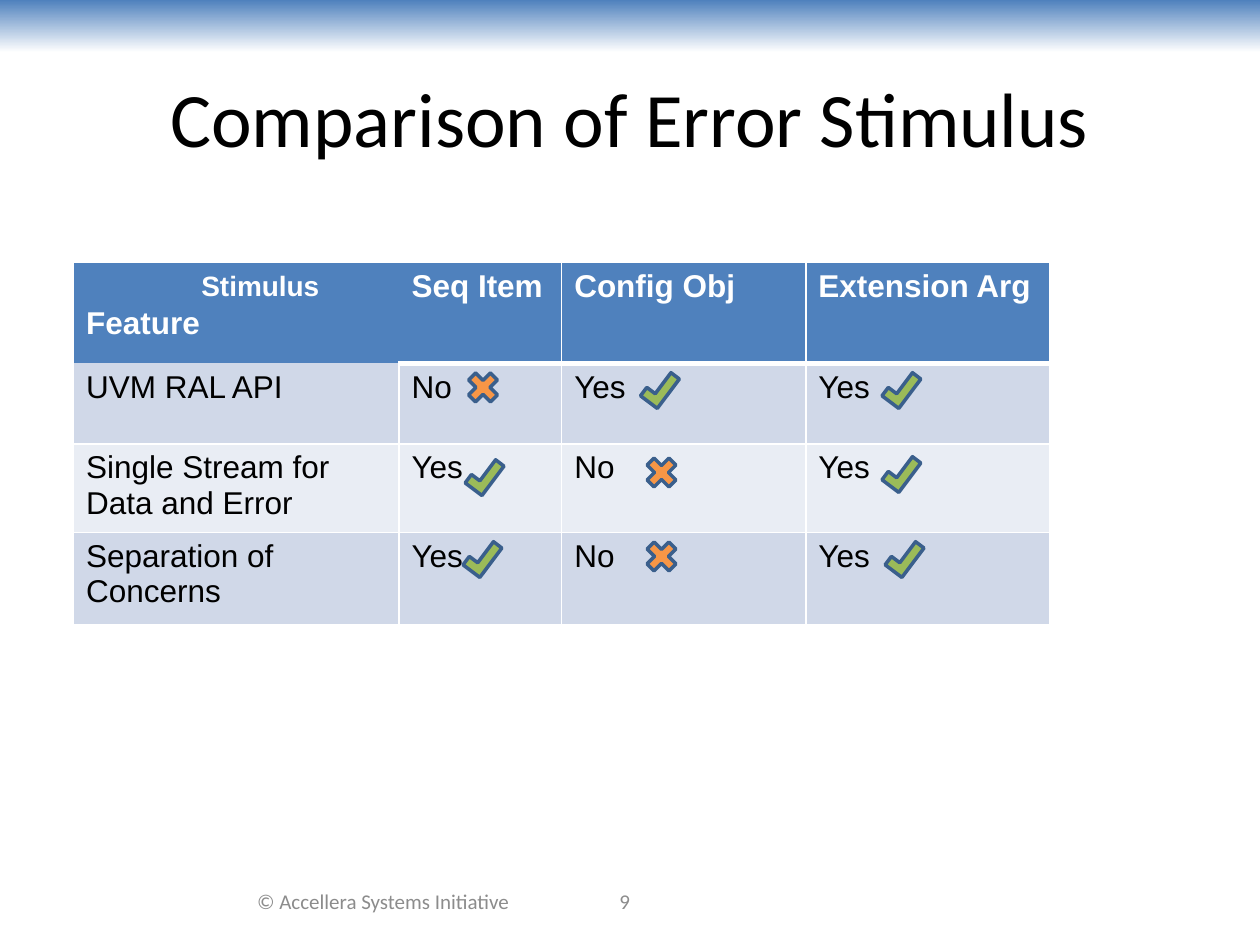
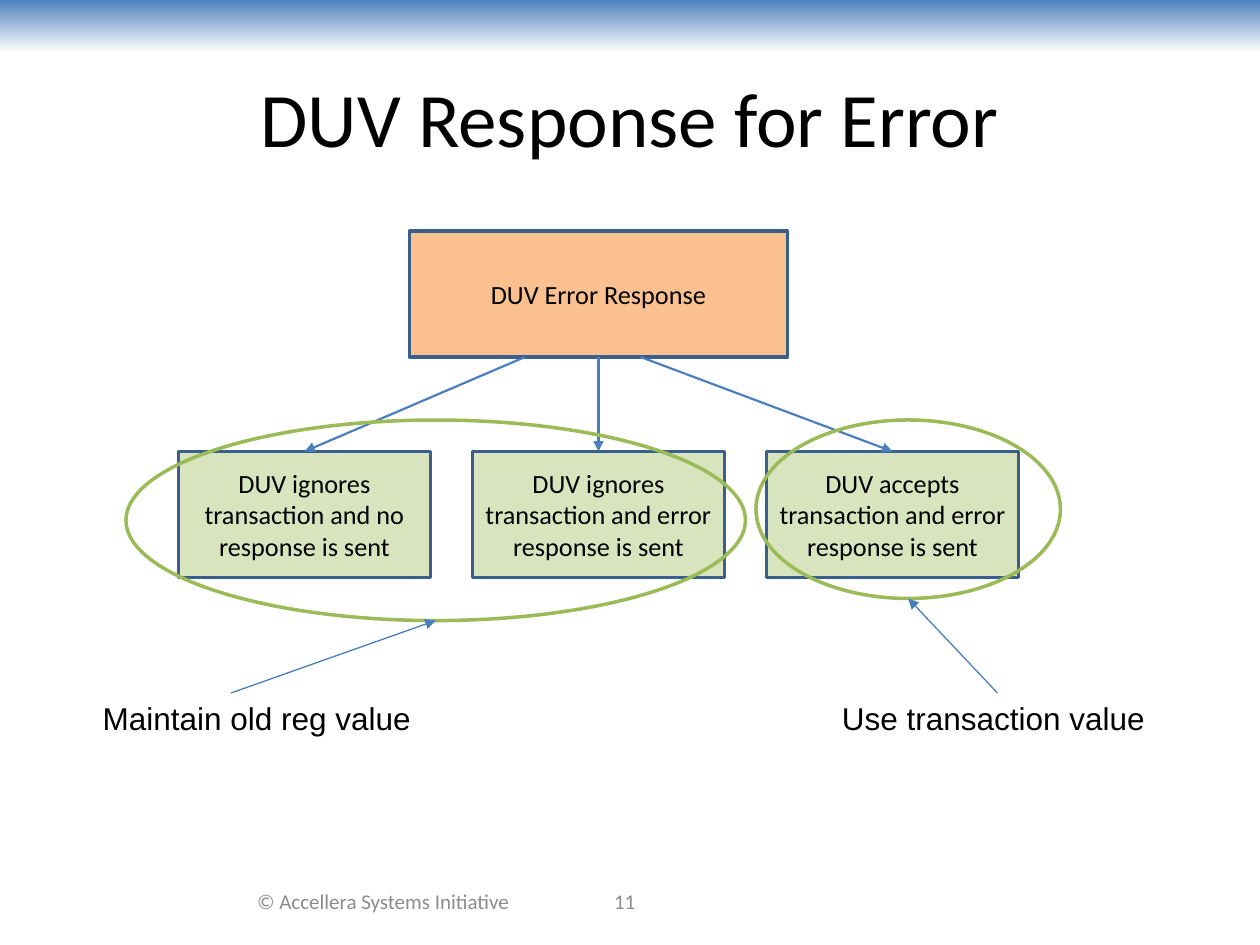
"""Builds two slides on error stimulus and DUV response, laid out on a 120 by 90 grid."""
from typing import NamedTuple, Optional

from lxml.etree import SubElement
from pptx import Presentation
from pptx.dml.color import RGBColor
from pptx.enum.shapes import MSO_CONNECTOR, MSO_SHAPE as Shape
from pptx.enum.text import MSO_ANCHOR as Anchor, PP_ALIGN as Align
from pptx.oxml.ns import qn
from pptx.util import Inches, Pt

SLIDE_W, SLIDE_H = Inches(10), Inches(7.5)
COLS, ROWS = 120, 90
BLUE, WHITE, BLACK, GREY = "4F81BD", "FFFFFF", "000000", "8C8C8C"
OUTLINE, ARROW = "3A5F8C", "4B7EBC"
ORANGE, GREEN, PEACH, PALE_GREEN = "F79646", "9BBB59", "FAC090", "D7E4BD"
BANDS = ("D0D8E8", "E9EDF4")


class Box(NamedTuple):
    x: float
    y: float
    w: float
    h: float


class Arrow(NamedTuple):
    x1: float
    y1: float
    x2: float
    y2: float
    width: float = 1.25


class Mark(NamedTuple):
    x: float
    y: float
    good: bool


class Style(NamedTuple):
    size: float
    font: str = "Calibri"
    colour: str = BLACK
    bold: bool = False
    align: Align = Align.CENTER


FOOTER = Style(12, colour=GREY)
NODE = Style(15)
LABEL = Style(18, "Arial", align=Align.LEFT)
HEADER = Style(18, "Arial", WHITE, True, Align.LEFT)

TABLE_AT = Box(7, 25, 93, 34)
COL_WIDTHS = (31, 15.5, 23.25, 23.25)
ROW_HEIGHTS = (9.6, 7.7, 7.9, 8.8)
FEATURES = (
    ("Feature", "Seq Item", "Config Obj", "Extension Arg"),
    ("UVM RAL API", "No", "Yes", "Yes"),
    ("Single Stream for Data and Error", "Yes", "No", "Yes"),
    ("Separation of Concerns", "Yes", "No", "Yes"),
)
MARKS = (
    Mark(44, 34.9, False), Mark(61.1, 35.9, True), Mark(84.1, 35.9, True),
    Mark(44.4, 44.2, True), Mark(61, 43, False), Mark(84.1, 43.9, True),
    Mark(44.2, 52, True), Mark(61, 51, False), Mark(84.4, 52, True),
)
RESPONSES = (
    "DUV ignores transaction and no response is sent",
    "DUV ignores transaction and error response is sent",
    "DUV accepts transaction and error response is sent",
)
BRANCHES = (Arrow(50, 34, 29, 43), Arrow(61, 34, 85, 43), Arrow(57, 34, 57, 43))
GROUPS = (Box(12, 40, 59, 19.1), Box(72, 40, 29, 17))
POINTERS = (Arrow(22, 66, 41.5, 59.1, 0.75), Arrow(95, 66, 86.5, 57, 0.75))
OUTCOMES = ((8.6, "Maintain old reg value"), (79, "Use transaction value"))


def rgb(value: str) -> RGBColor:
    return RGBColor.from_string(value)


def col(n: float) -> int:
    return round(SLIDE_W * n / COLS)


def row(n: float) -> int:
    return round(SLIDE_H * n / ROWS)


def place(box: Box) -> tuple:
    return col(box.x), row(box.y), col(box.w), row(box.h)


def write(tf, text: str, style: Style) -> None:
    tf.word_wrap = True
    p = tf.paragraphs[0]
    p.text, p.alignment = text, style.align
    p.font.size, p.font.name, p.font.bold = Pt(style.size), style.font, style.bold
    p.font.color.rgb = rgb(style.colour)


def add_text(s, box: Box, text: str, style: Style, anchor=Anchor.TOP) -> None:
    tf = s.shapes.add_textbox(*place(box)).text_frame
    write(tf, text, style)
    tf.vertical_anchor = anchor


def add_figure(s, kind: Shape, box: Box, fill: Optional[str], line: Optional[str]):
    sp = s.shapes.add_shape(kind, *place(box))
    sp.shadow.inherit = False
    if fill:
        sp.fill.solid()
        sp.fill.fore_color.rgb = rgb(fill)
    else:
        sp.fill.background()
    if line:
        sp.line.color.rgb, sp.line.width = rgb(line), Pt(2)
    else:
        sp.line.fill.background()
    return sp


def add_node(s, box: Box, text: str, fill: str) -> None:
    sp = add_figure(s, Shape.RECTANGLE, box, fill, OUTLINE)
    write(sp.text_frame, text, NODE)
    sp.text_frame.vertical_anchor = Anchor.MIDDLE


def add_arrow(s, a: Arrow) -> None:
    line = s.shapes.add_connector(
        MSO_CONNECTOR.STRAIGHT, col(a.x1), row(a.y1), col(a.x2), row(a.y2))
    line.line.color.rgb, line.line.width = rgb(ARROW), Pt(a.width)
    sp_pr = line.element.spPr
    SubElement(sp_pr.find(qn("a:ln")), qn("a:tailEnd"), type="triangle")
    SubElement(sp_pr, qn("a:effectLst"))


def add_mark(s, mark: Mark) -> None:
    if mark.good:
        sp = add_figure(s, Shape.CORNER, Box(mark.x, mark.y, 3.5, 2), GREEN, OUTLINE)
        sp.rotation = 306.9
    else:
        add_figure(s, Shape.MATH_MULTIPLY, Box(mark.x, mark.y, 4, 4), ORANGE, OUTLINE)


def set_borders(cell, widths: dict) -> None:
    tc_pr = cell._tc.get_or_add_tcPr()
    for side in "LRTB":
        ln = SubElement(tc_pr, qn(f"a:ln{side}"), w=str(int(Pt(widths[side]))))
        if widths[side]:
            SubElement(SubElement(ln, qn("a:solidFill")), qn("a:srgbClr"), val=WHITE)
        else:
            SubElement(ln, qn("a:noFill"))


def border_widths(i: int, j: int) -> dict:
    corner = (i, j) == (0, 0)
    return {
        "L": 0 if j == 0 or (i, j) == (0, 1) else 1,
        "R": 0 if corner else 1,
        "T": 0 if j == 0 and i < 2 else 3 if i == 1 else 1,
        "B": 0 if corner else 3 if i == 0 else 1,
    }


def add_feature_table(s) -> None:
    table = s.shapes.add_table(len(FEATURES), len(COL_WIDTHS), *place(TABLE_AT)).table
    table.first_row = table.horz_banding = False
    for column, width in zip(table.columns, COL_WIDTHS):
        column.width = col(width)
    for i, (texts, height) in enumerate(zip(FEATURES, ROW_HEIGHTS)):
        table.rows[i].height = row(height)
        for j, text in enumerate(texts):
            cell = table.cell(i, j)
            set_borders(cell, border_widths(i, j))
            cell.fill.solid()
            cell.fill.fore_color.rgb = rgb(BANDS[(i - 1) % 2] if i else BLUE)
            write(cell.text_frame, text, LABEL if i else HEADER)
    table.cell(0, 0).margin_top = row(4.1)


def add_master_band(prs, s) -> None:
    band = add_figure(s, Shape.RECTANGLE, Box(0, 0, COLS, 5), None, None)
    band.fill.gradient()
    band.fill.gradient_angle = 270
    for stop, position, colour in zip(band.fill.gradient_stops, (0, 1), (BLUE, WHITE)):
        stop.position, stop.color.rgb = position, rgb(colour)
    prs.slide_master.shapes.element.insert(2, band.element)


def add_slide(prs, title: str, number: int):
    s = prs.slides.add_slide(prs.slide_layouts[5])
    sp = s.shapes.title
    sp.left, sp.top, sp.width, sp.height = place(Box(6, 3.6, 108, 15))
    write(sp.text_frame, title, Style(44))
    sp.text_frame.vertical_anchor = Anchor.MIDDLE
    add_text(s, Box(22, 83.4, 29, 4.8), "© Accellera Systems Initiative", FOOTER, Anchor.MIDDLE)
    add_text(s, Box(48, 83.4, 23, 4.8), str(number), FOOTER, Anchor.MIDDLE)
    return s


def build_comparison(prs) -> None:
    s = add_slide(prs, "Comparison of Error Stimulus", 9)
    add_master_band(prs, s)
    add_feature_table(s)
    add_text(s, Box(18, 25, 16, 4.4), "Stimulus", HEADER._replace(size=16))
    for mark in MARKS:
        add_mark(s, mark)


def build_response(prs) -> None:
    s = add_slide(prs, "DUV Response for Error", 11)
    add_node(s, Box(39, 22, 36, 12), "DUV Error Response", PEACH)
    for i, text in enumerate(RESPONSES):
        add_node(s, Box(17 + 28 * i, 43, 24, 12), text, PALE_GREEN)
    for branch in BRANCHES:
        add_arrow(s, branch)
    for group in GROUPS:
        add_figure(s, Shape.OVAL, group, None, GREEN)
    for pointer, (x, text) in zip(POINTERS, OUTCOMES):
        add_arrow(s, pointer)
        add_text(s, Box(x, 66, 37, 4.8), text, LABEL)


def main() -> None:
    prs = Presentation()
    prs.slide_width, prs.slide_height = SLIDE_W, SLIDE_H
    build_comparison(prs)
    build_response(prs)
    prs.save("out.pptx")


if __name__ == "__main__":
    main()
